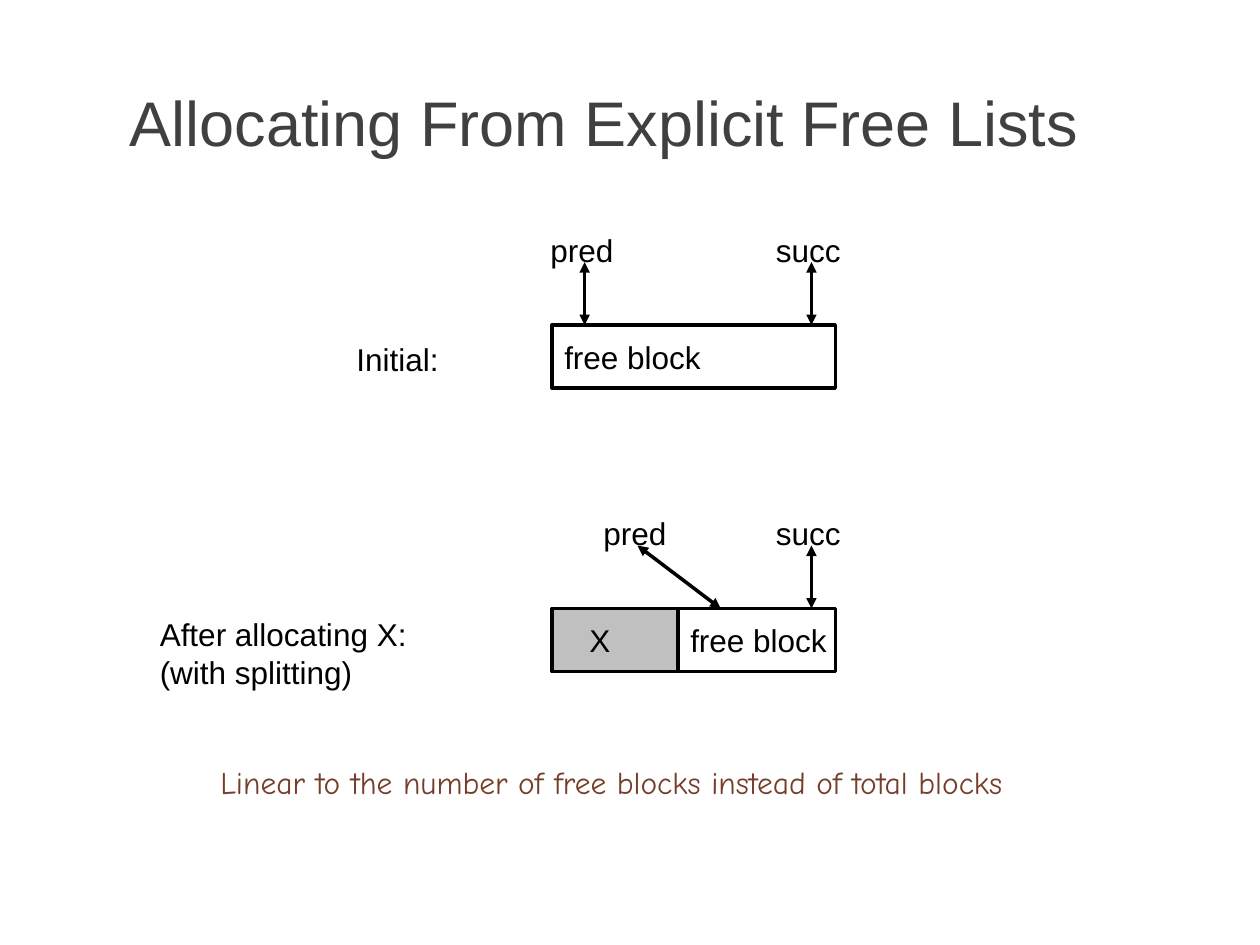
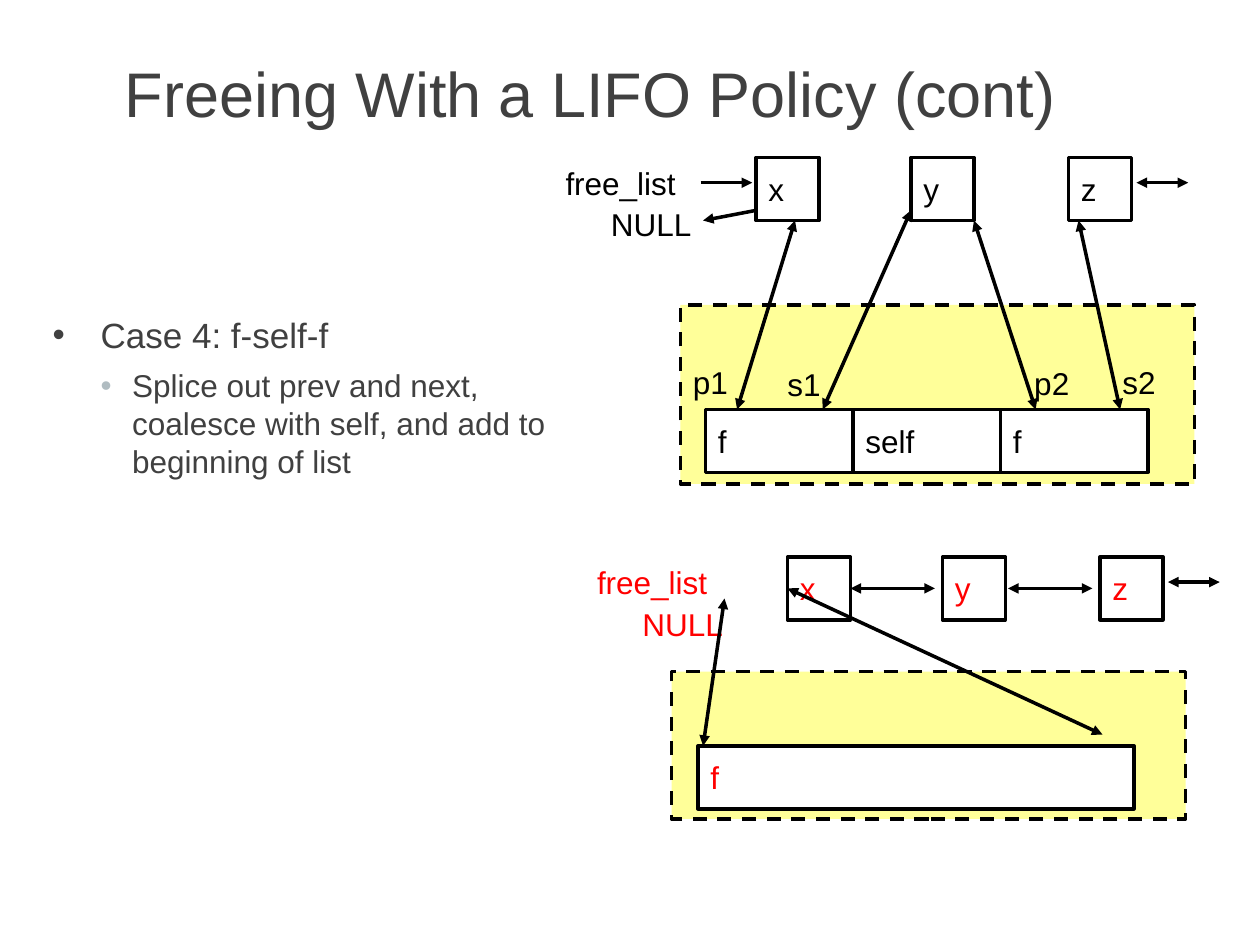
from lxml import etree
from pptx import Presentation
from pptx.dml.color import RGBColor
from pptx.enum.dml import MSO_LINE
from pptx.enum.shapes import MSO_CONNECTOR, MSO_SHAPE
from pptx.enum.text import MSO_ANCHOR, MSO_AUTO_SIZE, PP_ALIGN
from pptx.oxml.ns import qn
from pptx.util import Pt

# Scale: 100 px to the inch
PX = 9144

BLACK = RGBColor(0x00, 0x00, 0x00)
WHITE = RGBColor(0xFF, 0xFF, 0xFF)
GRAY = RGBColor(0xC0, 0xC0, 0xC0)
DARK = RGBColor(0x40, 0x40, 0x40)
PALE = RGBColor(0xB0, 0xBC, 0xC1)
RED = RGBColor(0xFF, 0x00, 0x00)
BROWN = RGBColor(0x75, 0x3E, 0x2A)
YELLOW = RGBColor(0xFF, 0xFF, 0x99)

RECT = MSO_SHAPE.RECTANGLE
STRAIGHT = MSO_CONNECTOR.STRAIGHT
DASH = MSO_LINE.DASH
LEFT, CENTER = PP_ALIGN.LEFT, PP_ALIGN.CENTER
TOP, MIDDLE = MSO_ANCHOR.TOP, MSO_ANCHOR.MIDDLE
FIXED, GROW = MSO_AUTO_SIZE.NONE, MSO_AUTO_SIZE.SHAPE_TO_FIT_TEXT

FONT = {"name": "Arial", "size": Pt(18)}
HEAD = {"size": Pt(36)}
SIDE = 50      # node side and block height
CELL = 117     # width of one cell of the split block


def emu(*vals):
    return [v * PX for v in vals]


def assign(obj, vals):
    for key, val in vals.items():
        setattr(obj, key, val)


def write(para, text, color, font):
    run = para.add_run()
    run.text = text
    assign(run.font, {**FONT, **font})
    run.font.color.rgb = color


def fill_text(shape, lines, color=BLACK, align=LEFT, font={}, **frame):
    body = shape.text_frame
    assign(body, {"vertical_anchor": MIDDLE, "word_wrap": False,
                  "auto_size": FIXED, **frame})
    for num, line in enumerate(lines.split("\n")):
        para = body.add_paragraph() if num else body.paragraphs[0]
        para.alignment = align
        write(para, line, color, font)


def label(slide, text, left, top, width, height=40, color=BLACK, **form):
    box = slide.shapes.add_textbox(*emu(left, top, width, height))
    fill_text(box, text, color, **{"auto_size": GROW, **form})


def title(slide, text, top, width):
    label(slide, text, 42, top, width, 63, DARK, align=CENTER, font=HEAD,
          word_wrap=True, auto_size=FIXED)


def block(slide, left, top, width, height=SIDE, text="", color=BLACK,
          fill=WHITE, dash=None):
    box = slide.shapes.add_shape(RECT, *emu(left, top, width, height))
    box.shadow.inherit = False
    box.fill.solid()
    box.fill.fore_color.rgb = fill
    box.line.color.rgb = BLACK
    assign(box.line, {"width": Pt(2), "dash_style": dash})
    if text:
        fill_text(box, text, color)


def arrow(slide, start, end, both=True):
    link = slide.shapes.add_connector(STRAIGHT, *emu(*start, *end))
    link.line.color.rgb = BLACK
    link.line.width = Pt(2)
    line = link.line._get_or_add_ln()
    for tag in ("a:headEnd", "a:tailEnd") if both else ("a:tailEnd",):
        etree.SubElement(line, qn(tag), type="triangle")
    etree.SubElement(link._element.spPr, qn("a:effectLst"))


def bullet(para, text, left, hang, dot, size):
    props = para._p.get_or_add_pPr()
    assign(para, {"alignment": LEFT})
    props.set("marL", str(left * PX))
    props.set("indent", str(-hang * PX))
    tint = etree.SubElement(props, qn("a:buClr"))
    etree.SubElement(tint, qn("a:srgbClr"), val=str(dot))
    etree.SubElement(props, qn("a:buFont"), typeface="Arial")
    etree.SubElement(props, qn("a:buChar"), char="•")
    write(para, text, DARK, {"size": Pt(size)})


def free_block(slide, top, left, pred, start, end):
    """Free block with its pred and succ pointers."""
    block(slide, left, top, 663 - left, text="free block")
    arrow(slide, (start, top - 50), (end, top))
    arrow(slide, (644, top - 50), (644, top))
    label(slide, "pred", pred, top - 80, 74)
    label(slide, "succ", 606, top - 80, 77)


def free_list(slide, left, top, color):
    """List head, its NULL end and the nodes x, y and z."""
    label(slide, "free_list", left, top, 117, color=color)
    label(slide, "NULL", left + 36, top + 33, 88, color=color)
    for name, shift in (("x", 161), ("y", 284), ("z", 409)):
        block(slide, left + shift, top, SIDE, text=name, color=color)
    arrow(slide, (left + 463, top + 20), (left + 504, top + 20))


def alloc_slide(slide):
    title(slide, "Allocating From Explicit Free Lists", 65, 875)

    # Before
    label(slide, "Initial:", 273, 265, 94)
    free_block(slide, 258, 438, 427, 464, 464)

    # After
    label(slide, "After allocating X:\n(with splitting)", 117, 483, 300, 70,
          word_wrap=True)
    free_block(slide, 483, 538, 469, 506, 572)
    block(slide, 438, 483, 100, fill=GRAY)
    label(slide, "X", 458, 488, 65, word_wrap=True)

    # Remark
    label(slide, "Linear to the number of free blocks instead of total blocks",
          165, 601, 717, color=BROWN, font={"name": "Comic Neue"},
          vertical_anchor=TOP)


def lifo_slide(slide):
    title(slide, "Freeing With a LIFO Policy (cont)", 42, 853)

    # Case text
    body = slide.shapes.add_textbox(*emu(32, 244, 421, 405)).text_frame
    body.word_wrap = True
    bullet(body.paragraphs[0], "Case 4: f-self-f", 38, 38, DARK, 20)
    para = body.add_paragraph()
    bullet(para, "Splice out prev and next, coalesce with self, "
           "and add to beginning of list", 63, 25, PALE, 18)
    para.space_before = Pt(6)

    # Before: three cells, each free one linked to two nodes
    block(slide, 540, 242, 408, 142, fill=YELLOW, dash=DASH)
    for num, name in enumerate(("f", "self", "f")):
        block(slide, 560 + num * CELL, 325, CELL, text=name)
    free_list(slide, 439, 125, BLACK)
    arrow(slide, (556, 145), (597, 145), both=False)
    arrow(slide, (600, 167), (558, 175), both=False)
    for name, left, top, start, end in (
            ("p1", 540, 283, (631, 175), 585),
            ("s1", 615, 285, (723, 167), 653),
            ("p2", 811, 284, (773, 175), 822),
            ("s2", 881, 283, (856, 175), 889)):
        label(slide, name, left, top, 49)
        arrow(slide, start, (end, 325))

    # After: one merged block at the head of the list
    block(slide, 533, 533, 408, 117, fill=YELLOW, dash=DASH)
    block(slide, 554, 592, 346, text="f", color=RED)
    free_list(slide, 464, 442, RED)
    for left in (675, 800):
        arrow(slide, (left, 467), (left + 67, 467))
    arrow(slide, (575, 475), (558, 592))
    arrow(slide, (625, 467), (875, 583))


def main():
    deck = Presentation()
    assign(deck, {"slide_width": 1000 * PX, "slide_height": 750 * PX})
    for build in (alloc_slide, lifo_slide):
        build(deck.slides.add_slide(deck.slide_layouts[6]))
    deck.save("out.pptx")


if __name__ == "__main__":
    main()
